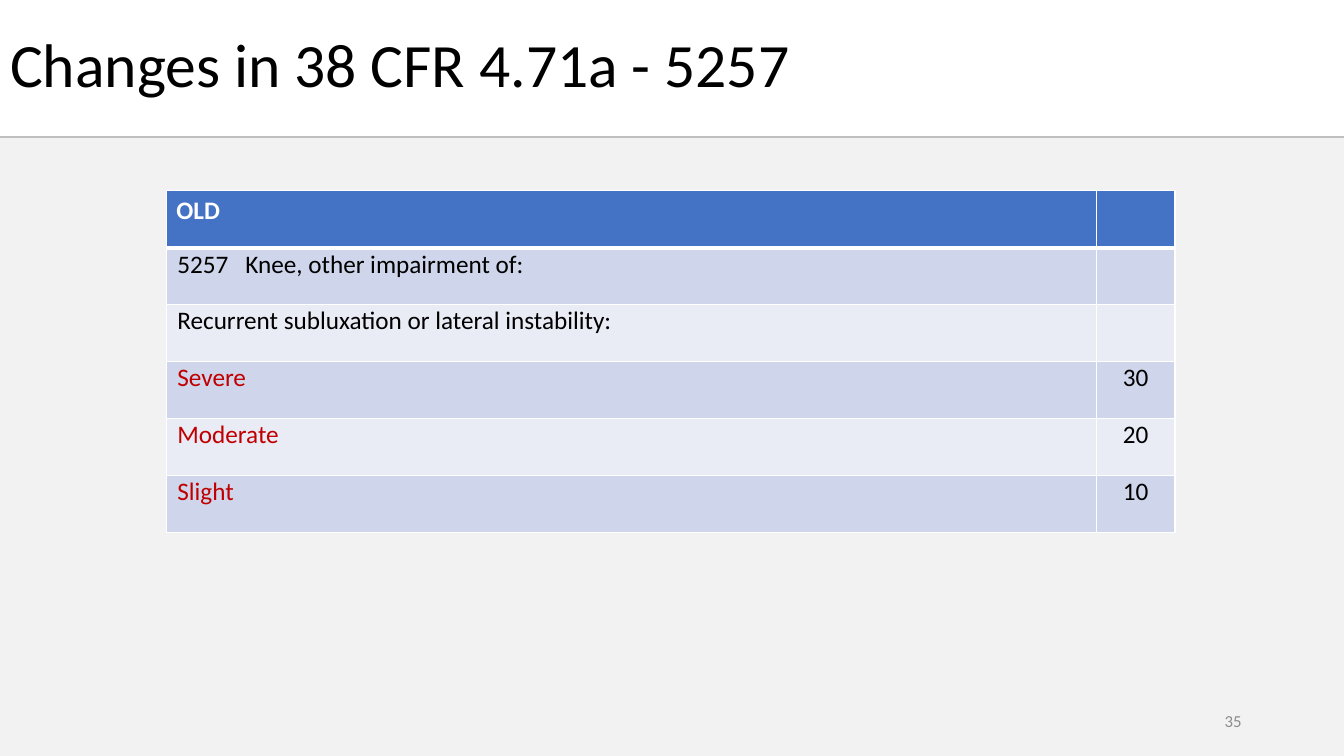
from lxml import etree
from pptx import Presentation
from pptx import util as u
from pptx.dml.color import RGBColor
from pptx.enum import shapes, text
from pptx.oxml.ns import qn

BLACK = RGBColor(0x00, 0x00, 0x00)
WHITE = RGBColor(0xFF, 0xFF, 0xFF)
PANEL = RGBColor(0xF2, 0xF2, 0xF2)
RULE = RGBColor(0xBF, 0xBF, 0xBF)
HEADER = RGBColor(0x44, 0x72, 0xC4)
BANDS = [RGBColor(0xCF, 0xD5, 0xEA), RGBColor(0xE9, 0xEB, 0xF5)]
RED = RGBColor(0xC0, 0x00, 0x00)
GREY = RGBColor(0x8C, 0x8C, 0x8C)

WIDTH, HEIGHT = u.Cm(33.87), u.Cm(19.05)
RATINGS = [
    ("OLD", ""),
    ("5257   Knee, other impairment of:", ""),
    ("Recurrent subluxation or lateral instability:", ""),
    ("Severe", "30"),
    ("Moderate", "20"),
    ("Slight", "10"),
]


class RatingPage:
    font = "Calibri"

    def __init__(self, deck):
        self.page = deck.slides.add_slide(deck.slide_layouts[5])

    def format_text(self, frame, size, color, align, bold=False):
        para = frame.paragraphs[0]
        para.alignment = align
        for font in [para.font] + [span.font for span in para.runs]:
            font.name, font.size, font.bold = self.font, u.Pt(size), bold
            font.color.rgb = color

    def panel(self, top):
        box = self.page.shapes.add_shape(
            shapes.MSO_SHAPE.RECTANGLE, 0, top, WIDTH, HEIGHT - top)
        box.shadow.inherit = False
        box.fill.solid()
        box.fill.fore_color.rgb = PANEL
        box.line.fill.background()

    def rule(self, top):
        line = self.page.shapes.add_connector(
            shapes.MSO_CONNECTOR.STRAIGHT, 0, top, WIDTH, top)
        line.line.color.rgb = RULE
        line.line.width = u.Pt(1.5)
        etree.SubElement(line._element.spPr, qn("a:effectLst"))

    def title(self, wording):
        box = self.page.shapes.title
        box.left, box.top = 0, u.Cm(0.33)
        box.width, box.height = u.Cm(22.6), u.Cm(2.72)
        frame = box.text_frame
        frame.text = wording
        frame.auto_size = text.MSO_AUTO_SIZE.NONE
        frame.vertical_anchor = text.MSO_ANCHOR.MIDDLE
        frame.paragraphs[0].line_spacing = 0.9
        self.format_text(frame, 44, BLACK, text.PP_ALIGN.LEFT)

    def borders(self, cell, top, bottom):
        """Give a cell white borders; top and bottom are widths in points."""
        props = cell._tc.get_or_add_tcPr()
        widths = {"lnL": 1, "lnR": 1, "lnT": top, "lnB": bottom}
        for place, (side, points) in enumerate(widths.items()):
            line = etree.Element(qn(f"a:{side}"), w=str(u.Pt(points)))
            fill = etree.SubElement(line, qn("a:solidFill"))
            etree.SubElement(fill, qn("a:srgbClr"), val=str(WHITE))
            props.insert(place, line)

    def cell(self, cell, wording, row, column):
        is_header = row == 0
        cell.text = wording
        cell.fill.solid()
        cell.fill.fore_color.rgb = HEADER if is_header else BANDS[(row - 1) % 2]
        if not is_header:
            cell.margin_top = cell.margin_bottom = cell.margin_right = u.Cm(0.03)
            cell.margin_left = u.Cm(0.03 if column else 0.28)
        color = WHITE if is_header else RED if row > 2 and not column else BLACK
        align = text.PP_ALIGN.CENTER if column else text.PP_ALIGN.LEFT
        self.format_text(cell.text_frame, 18, color, align, bold=is_header)
        self.borders(cell, 3 if row == 1 else 1, 3 if is_header else 1)

    def table(self, rows):
        table = self.page.shapes.add_table(
            len(rows), 2, u.Cm(4.19), u.Cm(4.81), u.Cm(25.42), u.Cm(8.61)).table
        table.columns[0].width = u.Cm(23.44)
        table.columns[1].width = u.Cm(1.98)
        for row, wordings in enumerate(rows):
            for column, wording in enumerate(wordings):
                self.cell(table.cell(row, column), wording, row, column)

    def page_number(self, number):
        box = self.page.shapes.add_textbox(
            u.Cm(23.92), u.Cm(17.66), u.Cm(7.62), u.Cm(1.01))
        frame = box.text_frame
        frame.word_wrap = True
        frame.vertical_anchor = text.MSO_ANCHOR.MIDDLE
        frame.text = number
        self.format_text(frame, 12, GREY, text.PP_ALIGN.RIGHT)


def main():
    deck = Presentation()
    deck.slide_width, deck.slide_height = WIDTH, HEIGHT
    page = RatingPage(deck)
    page.panel(u.Cm(3.48))
    page.rule(u.Cm(3.45))
    page.title("Changes in 38 CFR 4.71a - 5257")
    page.table(RATINGS)
    page.page_number("35")
    deck.save("out.pptx")


if __name__ == "__main__":
    main()
